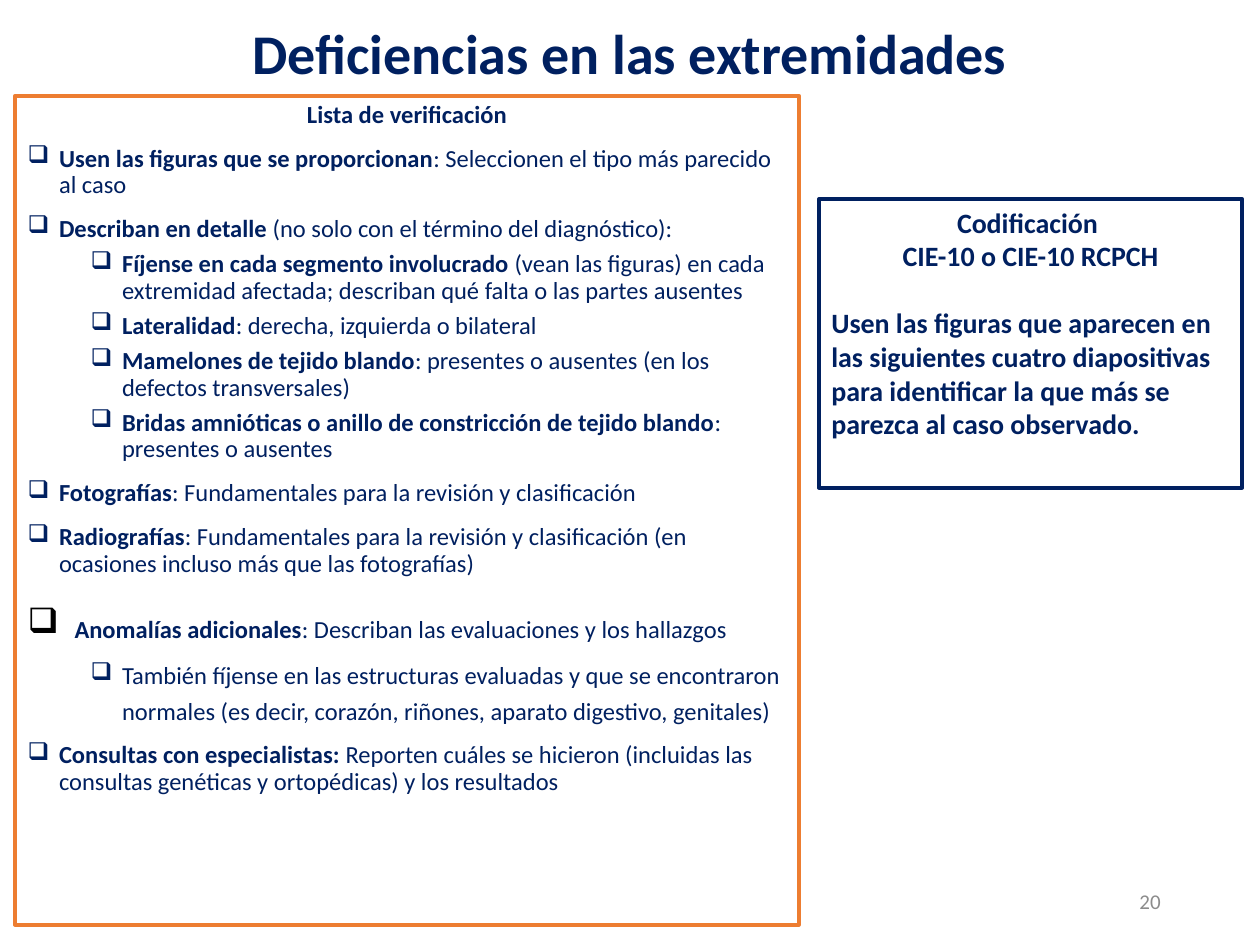
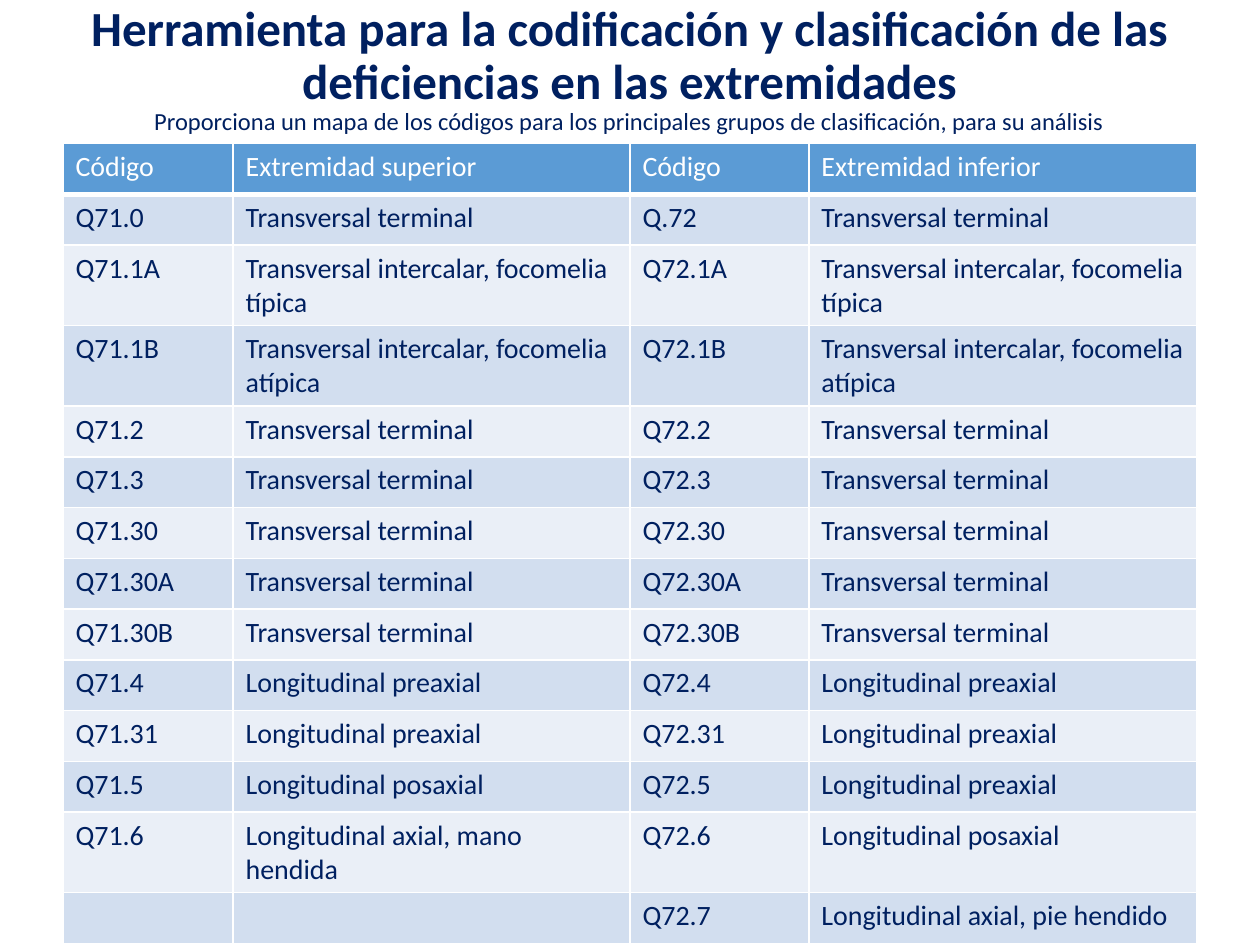
from lxml import etree
from pptx import Presentation
from pptx import util as u
from pptx.dml.color import RGBColor
from pptx.enum import shapes, text
from pptx.oxml.ns import qn

# Shared look
COLORS = {
    "navy": "002060", "orange": "ED7D31", "gray": "8C8C8C", "black": "000000",
    "white": "FFFFFF", "header": "5B9BD5", "band_dark": "D2DEEF", "band_light": "EAEFF7",
}
FONT = "Calibri"
GRID = u.Inches(0.1)  # the slide is 100 columns by 75 rows
COLUMNS, ROWS = 100, 75
LEFT, CENTER, RIGHT = text.PP_ALIGN.LEFT, text.PP_ALIGN.CENTER, text.PP_ALIGN.RIGHT

# Checklist: (kind, bold lead, plain rest)
CHECKLIST = [
    ("heading", "Lista de verificación", ""),
    ("item", "Usen las figuras que se proporcionan", ": Seleccionen el tipo más parecido al caso"),
    ("item", "Describan en detalle", " (no solo con el término del diagnóstico):"),
    ("detail", "Fíjense en cada segmento involucrado",
     " (vean las figuras) en cada extremidad afectada; describan qué falta o las partes ausentes"),
    ("detail", "Lateralidad", ": derecha, izquierda o bilateral"),
    ("detail", "Mamelones de tejido blando",
     ": presentes o ausentes (en los defectos transversales)"),
    ("detail", "Bridas amnióticas o anillo de constricción de tejido blando",
     ": presentes o ausentes"),
    ("item", "Fotografías", ": Fundamentales para la revisión y clasificación"),
    ("item", "Radiografías",
     ": Fundamentales para la revisión y clasificación (en ocasiones incluso más que las fotografías)"),
    ("large item", "Anomalías adicionales", ": Describan las evaluaciones y los hallazgos"),
    ("open detail", "",
     "También fíjense en las estructuras evaluadas y que se encontraron normales "
     "(es decir, corazón, riñones, aparato digestivo, genitales)"),
    ("item", "Consultas con especialistas: ",
     "Reporten cuáles se hicieron (incluidas las consultas genéticas y ortopédicas) y los resultados"),
]
# kind: (level, left margin in inches, line spacing, space before)
CHECKLIST_STYLES = {
    "heading": (0, 0, 0.9, 0),
    "item": (0, 0.25, 0.9, 10),
    "detail": (1, 0.75, 0.9, 5),
    "large item": (0, 0.31, 1.2, 10),
    "open detail": (1, 0.75, 1.2, 5),
}

# Classification codes
TERMINAL = "Transversal terminal"
TYPICAL = "Transversal intercalar, focomelia típica"
ATYPICAL = "Transversal intercalar, focomelia atípica"
PREAXIAL, POSTAXIAL = "Longitudinal preaxial", "Longitudinal posaxial"
CODES = [
    ("Código", "Extremidad superior", "Código", "Extremidad inferior"),
    ("Q71.0", TERMINAL, "Q.72", TERMINAL),
    ("Q71.1A", TYPICAL, "Q72.1A", TYPICAL),
    ("Q71.1B", ATYPICAL, "Q72.1B", ATYPICAL),
    *[(f"Q71.{n}", TERMINAL, f"Q72.{n}", TERMINAL) for n in ("2", "3", "30", "30A", "30B")],
    ("Q71.4", PREAXIAL, "Q72.4", PREAXIAL),
    ("Q71.31", PREAXIAL, "Q72.31", PREAXIAL),
    ("Q71.5", POSTAXIAL, "Q72.5", PREAXIAL),
    ("Q71.6", "Longitudinal axial, mano hendida", "Q72.6", POSTAXIAL),
    ("", "", "Q72.7", "Longitudinal axial, pie hendido"),
]
CODE_COLUMNS = (13.5, 31.5, 14.2, 30.8)
TWO_LINE_ROWS = (2, 3, 12)


def grid(*cells):
    return [u.Emu(round(cell * GRID)) for cell in cells]


def rgb(name):
    return RGBColor.from_string(COLORS[name])


def style_run(run, size, color="navy", bold=False):
    run.font.name, run.font.size, run.font.bold = FONT, u.Pt(size), bold
    run.font.color.rgb = rgb(color)


def add_run(paragraph, words, size, color="navy", bold=False):
    run = paragraph.add_run()
    run.text = words
    style_run(run, size, color, bold)


def add_bullet(paragraph, margin):
    properties = paragraph._p.get_or_add_pPr()
    properties.set("marL", str(u.Inches(margin)))
    properties.set("indent", str(-u.Inches(min(margin, 0.25) if margin != 0.31 else margin)))
    etree.SubElement(properties, qn("a:buChar")).set("char", "❑")


def add_text(slide, place, anchor=text.MSO_ANCHOR.MIDDLE):
    frame = slide.shapes.add_textbox(*grid(*place)).text_frame
    frame.word_wrap, frame.vertical_anchor = True, anchor
    return frame


def add_title(slide, place, title, size, subtitle=""):
    paragraph = add_text(slide, place).paragraphs[0]
    paragraph.alignment, paragraph.line_spacing = CENTER, 0.9
    add_run(paragraph, title, size, bold=True)
    if subtitle:
        paragraph.add_line_break()
        add_run(paragraph, subtitle, 14)


def add_page_number(slide, number):
    paragraph = add_text(slide, (70.6, 69.5, 22.5, 4)).paragraphs[0]
    paragraph.text, paragraph.alignment = number, RIGHT
    style_run(paragraph.runs[0], 12, "gray")


def add_frame(slide, place, border):
    """Outlined box whose text starts at the top."""
    box = slide.shapes.add_shape(shapes.MSO_SHAPE.RECTANGLE, *grid(*place))
    box.shadow.inherit = False
    box.fill.background()
    box.line.color.rgb, box.line.width = rgb(border), u.Pt(2.25)
    frame = box.text_frame
    frame.word_wrap, frame.vertical_anchor = True, text.MSO_ANCHOR.TOP
    return frame


def next_paragraph(frame, index):
    return frame.add_paragraph() if index else frame.paragraphs[0]


def add_checklist(slide, place):
    frame = add_frame(slide, place, "orange")
    for index, (kind, lead, rest) in enumerate(CHECKLIST):
        level, margin, spacing, before = CHECKLIST_STYLES[kind]
        paragraph = next_paragraph(frame, index)
        paragraph.alignment = CENTER if kind == "heading" else LEFT
        paragraph.level, paragraph.line_spacing = level, spacing
        paragraph.space_before = u.Pt(before)
        if margin:
            add_bullet(paragraph, margin)
        if kind == "large item":
            add_run(paragraph, " ", 20, "black")
        for words, bold in ((lead, True), (rest, False)):
            if words:
                add_run(paragraph, words, 14, bold=bold)


def add_coding_note(slide, place):
    frame = add_frame(slide, place, "navy")
    lines = [
        ("Codificación ", CENTER, 0),
        ("CIE-10 o CIE-10 RCPCH", CENTER, 0),
        ("Usen las figuras que aparecen en las siguientes cuatro diapositivas "
         "para identificar la que más se parezca al caso observado.", LEFT, 19.2),
    ]
    for index, (words, alignment, before) in enumerate(lines):
        paragraph = next_paragraph(frame, index)
        paragraph.text, paragraph.alignment = words, alignment
        paragraph.space_before = u.Pt(before)
        style_run(paragraph.runs[0], 16, bold=True)


def add_cell_borders(cell, bottom):
    properties = cell._tc.get_or_add_tcPr()
    for position, (side, width) in enumerate((("L", 1), ("R", 1), ("T", 1), ("B", bottom))):
        line = etree.Element(qn(f"a:ln{side}"), w=str(u.Pt(width)))
        fill = etree.SubElement(line, qn("a:solidFill"))
        etree.SubElement(fill, qn("a:srgbClr")).set("val", COLORS["white"])
        properties.insert(position, line)


def add_code_table(slide, left, top):
    place = grid(left, top, sum(CODE_COLUMNS), 63.3)
    table = slide.shapes.add_table(len(CODES), len(CODE_COLUMNS), *place).table
    for column, width in zip(table.columns, grid(*CODE_COLUMNS)):
        column.width = width
    for r, values in enumerate(CODES):
        table.rows[r].height = u.Pt(46 if r in TWO_LINE_ROWS else 29)
        fill = "header" if r == 0 else ("band_light", "band_dark")[r % 2]
        for c, value in enumerate(values):
            cell = table.cell(r, c)
            cell.fill.solid()
            cell.fill.fore_color.rgb = rgb(fill)
            add_cell_borders(cell, bottom=1 if r else 3)
            cell.text_frame.text = value
            for run in cell.text_frame.paragraphs[0].runs:
                style_run(run, 16, "navy" if r else "white")


def main():
    deck = Presentation()
    deck.slide_width, deck.slide_height = grid(COLUMNS, ROWS)
    blank = deck.slide_layouts[6]

    # Checklist for limb deficiencies
    checklist = deck.slides.add_slide(blank)
    add_page_number(checklist, "20")
    add_title(checklist, (5, 0.5, 90, 7.9), "Deficiencias en las extremidades", 32)
    add_checklist(checklist, (1.2, 7.6, 62.2, 65.8))
    add_coding_note(checklist, (65, 15.8, 33.6, 22.9))

    # Coding and classification tool
    coding = deck.slides.add_slide(blank)
    add_title(
        coding, (5, 1.3, 89.9, 8.5),
        "Herramienta para la codificación y clasificación de las deficiencias en las extremidades", 28,
        "Proporciona un mapa de los códigos para los principales grupos de clasificación, para su análisis")
    add_code_table(coding, 5, 11.4)

    deck.save("out.pptx")


if __name__ == "__main__":
    main()
